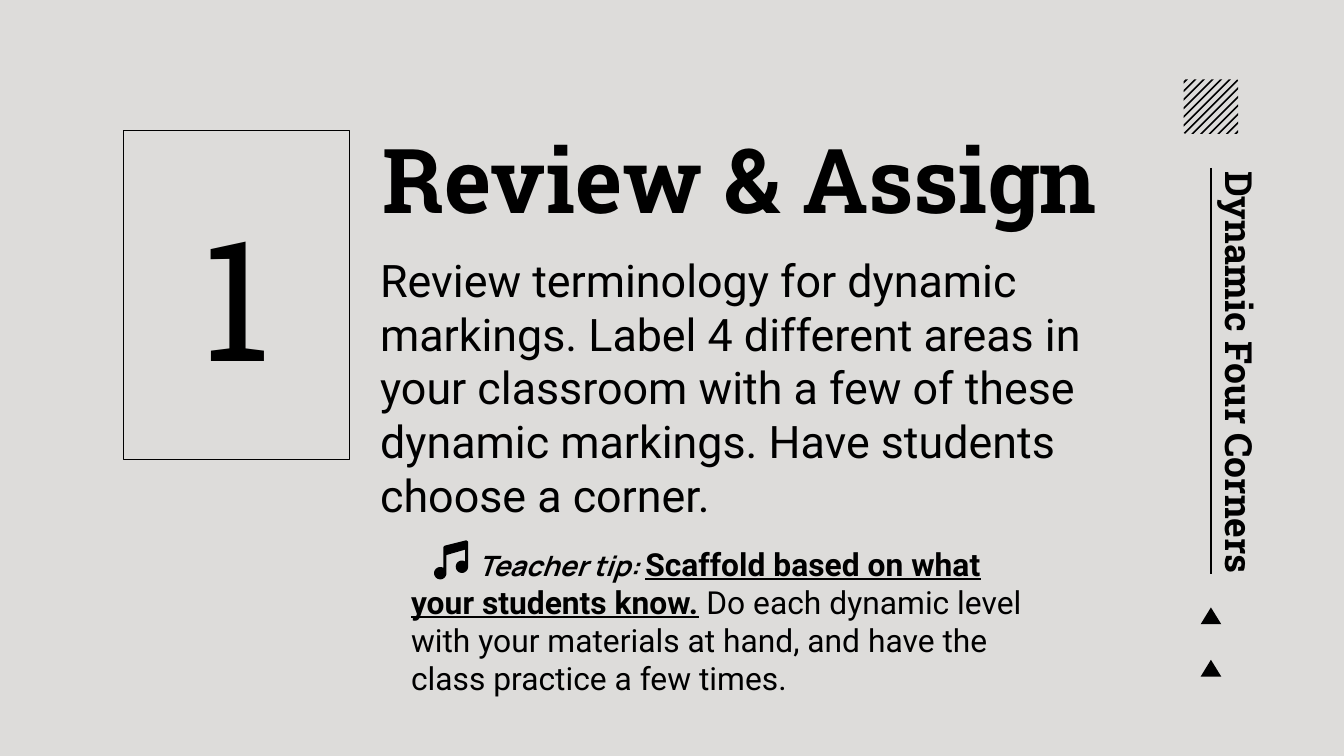
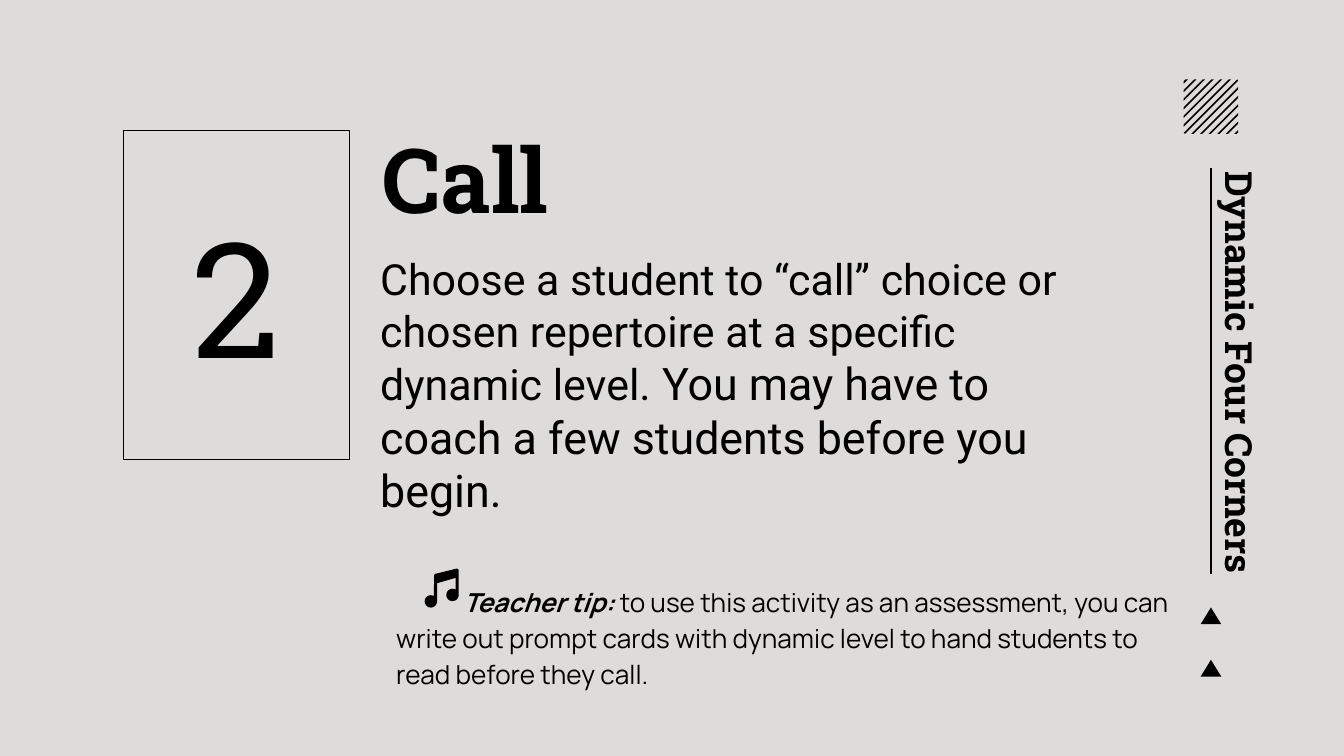
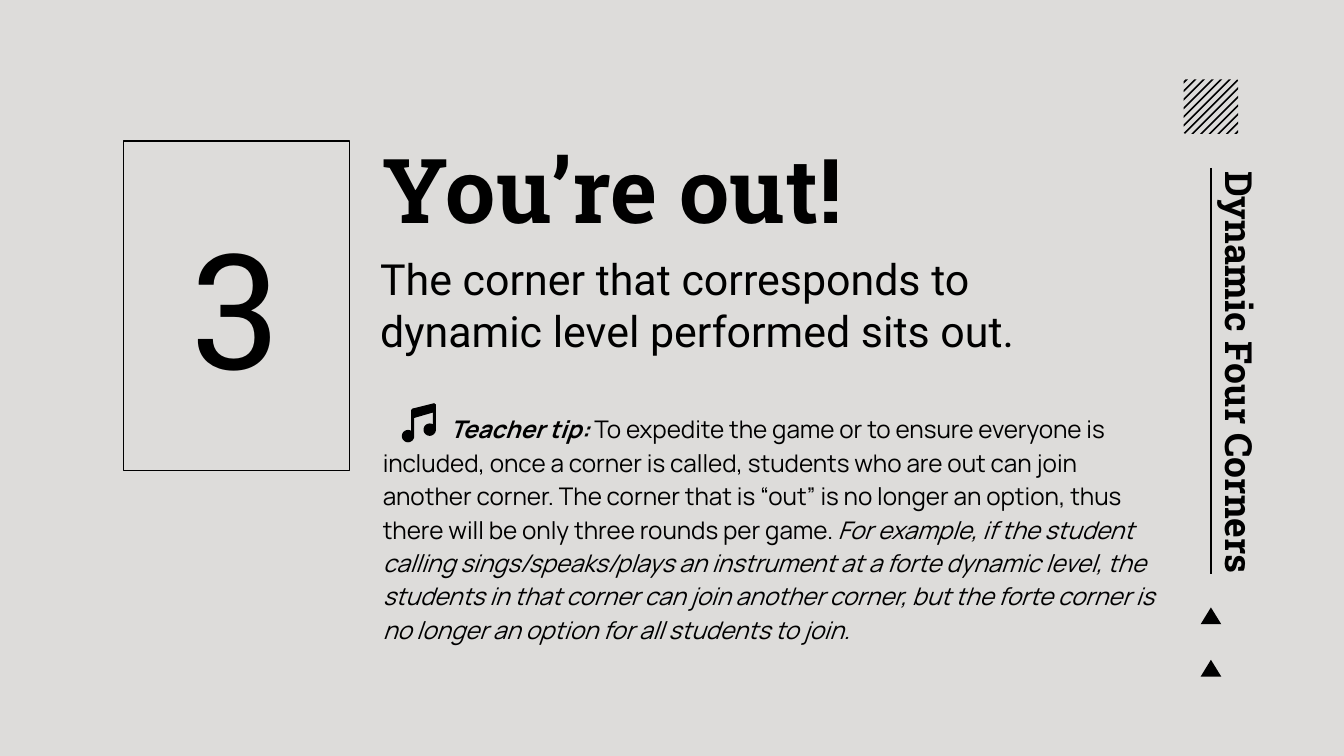
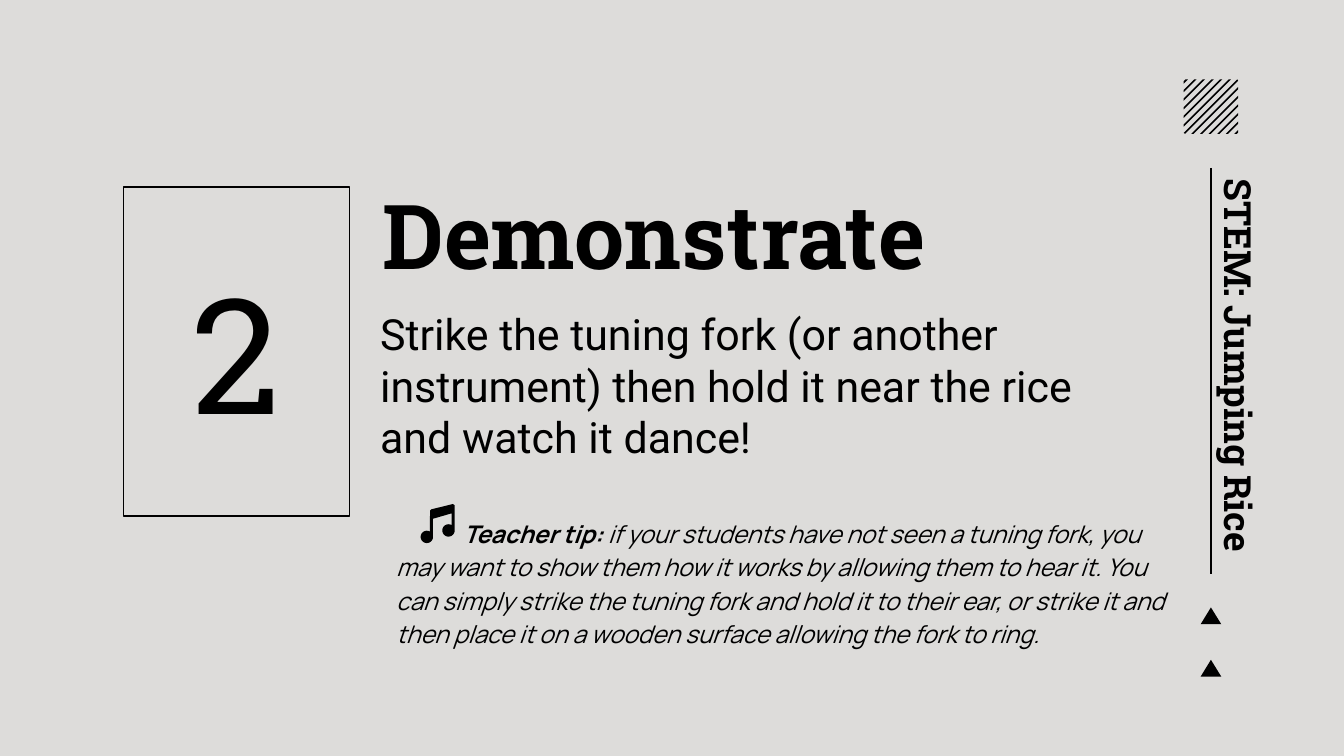
from math import cos, radians, sin

from lxml import etree
from pptx import Presentation
from pptx.dml.color import RGBColor
from pptx.enum.shapes import MSO_CONNECTOR, MSO_SHAPE
from pptx.enum.text import MSO_ANCHOR, PP_ALIGN
from pptx.oxml.ns import qn
from pptx.util import Emu, Inches, Pt

RECT = MSO_SHAPE.RECTANGLE
LINE = MSO_CONNECTOR.STRAIGHT
TOP, MIDDLE = MSO_ANCHOR.TOP, MSO_ANCHOR.MIDDLE
LEFT, CENTER = PP_ALIGN.LEFT, PP_ALIGN.CENTER

COLS, ROWS = 100, 56.25  # square grid cells of a tenth of an inch
INK, PAPER = "000000", "DDDCDA"
SLAB, SANS, TIP = "Roboto Slab", "Roboto", "Manrope"


def cell(count):
    return Emu(round(count * Inches(0.1)))


def color(code):
    return RGBColor.from_string(code)


def arc(x, y, radius):
    """Points of a note head, from its upper right round to its right side."""
    return [(x + radius * cos(radians(a)), y + radius * sin(radians(a)))
            for a in range(300, -1, -15)]


def stripes(side, first, step, width, count):
    """Diagonal bands clipped to a square."""
    bands = []
    for i in range(count):
        near = first + i * step
        ends = [(min(u, side), max(u - side, 0)) for u in (near, near + width)]
        bands.append(ends + [(y, x) for x, y in reversed(ends)])
    return bands


NOTE = [(2.4, 0), (0.8, 0.4), (0.7, 0.5), *arc(0.46, 2.45, 0.46),
        (0.92, 1.1), (2.3, 0.7), *arc(2.07, 1.97, 0.46), (2.53, 0.1)]
HATCH = stripes(4.05, 0.15, 0.64, 0.17, 13)
ARROW = [(0, 1.25), (0.77, 0), (1.54, 1.25)]


class Deck:
    def __init__(self):
        self.prs = Presentation()
        self.prs.slide_width, self.prs.slide_height = cell(COLS), cell(ROWS)
        fill = self.prs.slide_master.background.fill
        fill.solid()
        fill.fore_color.rgb = color(PAPER)

    def page(self):
        self.slide = self.prs.slides.add_slide(self.prs.slide_layouts[6])
        self.shapes = self.slide.shapes

    def text(self, runs, box, size=24, font=SANS, bold=False, align=LEFT,
             anchor=TOP, turn=0, indent=0, space=None):
        """Runs are a string, or pairs of a string and its own font settings."""
        shape = self.shapes.add_textbox(*map(cell, box))
        shape.rotation = turn
        frame = shape.text_frame
        frame.word_wrap = True
        frame.vertical_anchor = anchor
        frame.margin_left = frame.margin_right = cell(1)
        frame.margin_top = frame.margin_bottom = cell(1)
        para = frame.paragraphs[0]
        para.alignment = align
        para.line_spacing = space
        if indent:
            props = para._p.get_or_add_pPr()
            props.set("marL", "0")
            props.set("indent", str(cell(indent)))
        for words, own in [(runs, {})] if isinstance(runs, str) else runs:
            run = para.add_run()
            run.text = words
            look = {"name": font, "size": size, "bold": bold, **own}
            look["size"] = Pt(look["size"])
            for key, value in look.items():
                setattr(run.font, key, value)
            run.font.color.rgb = color(INK)

    def rect(self, box):
        shape = self.shapes.add_shape(RECT, *map(cell, box))
        shape.shadow.inherit = False
        shape.fill.solid()
        shape.fill.fore_color.rgb = color(PAPER)
        shape.line.color.rgb = color(INK)
        shape.line.width = Pt(0.75)

    def line(self, *ends):
        rule = self.shapes.add_connector(LINE, *map(cell, ends))
        rule.line.color.rgb = color(INK)
        rule.line.width = Pt(0.75)
        etree.SubElement(rule._element.spPr, qn("a:effectLst"))

    def solid(self, left, top, *loops):
        """One filled outline made of closed loops."""
        path = None
        for loop in loops:
            spots = [(cell(left + x), cell(top + y)) for x, y in loop]
            if path is None:
                path = self.shapes.build_freeform(*spots[0])
            else:
                path.move_to(*spots[0])
            path.add_line_segments(spots[1:], close=True)
        shape = path.convert_to_shape()
        shape.shadow.inherit = False
        shape.fill.solid()
        shape.fill.fore_color.rgb = color(INK)
        shape.line.fill.background()

    def side(self, label, width):
        """The right edge: hatch, rule, turned label and arrows."""
        for top in (45.2, 49.1):
            self.solid(89.33, top, ARROW)
        self.line(90.1, 12.5, 90.1, 42.7)
        self.solid(88.07, 5.9, *HATCH)
        mid = 91 if width == 35 else 90.95
        high = 29.25 if width == 35 else 27.25
        self.text(label, (mid - width / 2, high - 3.95, width, 7.9),
                  size=20, font=SLAB, bold=True, turn=90)

    def step(self, number, title, body, tip, top, low, spot, note,
             digit=86, size=23, tall=14, space=1.15,
             label="Dynamic Four Corners", width=35):
        self.page()
        self.side(label, width)
        self.rect((9.2, top, 16.8, 24.5))
        self.text(number, (9.7, top + 3.1, 15.7, 18.2), size=digit, font=SLAB,
                  align=CENTER, anchor=MIDDLE)
        self.text(title, (27.5, top - 1.5, 60, 9.6), size=48, font=SLAB,
                  bold=True)
        self.text(body, (27.3, low, 56.8, 18.2), size=size)
        self.text(tip, spot, size=tall, font=TIP, indent=5, space=space)
        self.solid(*note, NOTE)


LEAD = {"bold": True, "italic": True}
SLANT = {"italic": True}
ROBOTO = {"name": SANS, "size": 17}

STEPS = [
    dict(number="1", title="Review & Assign", digit=90, size=24,
         body="Review terminology for dynamic markings. Label 4 different "
              "areas in your classroom with a few of these dynamic markings. "
              "Have students choose a corner.",
         tip=[("Teacher tip: ", LEAD),
              ("Scaffold based on what your students know.",
               {**ROBOTO, "bold": True, "underline": True}),
              (" Do each dynamic level with your materials at hand, and have "
               "the class practice a few times.", ROBOTO)],
         top=9.7, low=17.8, spot=(29.6, 39.5, 47.9, 14.5), note=(32.3, 40.2),
         tall=15, space=None),
    dict(number="2", title="Call",
         body=[("Choose a student to “call” choice or chosen repertoire at a "
                "specific dynamic level. ", {}),
               ("You may have to coach a few students before you begin.",
                {"size": 24})],
         tip=[("Teacher tip: ", LEAD),
              ("to use this activity as an assessment, you can write out "
               "prompt cards with dynamic level to hand students to read "
               "before they call.", {})],
         top=9.7, low=17.8, spot=(28.5, 42.3, 59.7, 12.5), note=(31.6, 42.3)),
    dict(number="3", title="You’re out!",
         body="The corner that corresponds to dynamic level performed sits "
              "out.",
         tip=[("Teacher tip: ", LEAD),
              ("To expedite the game or to ensure everyone is included, once "
               "a corner is called, students who are out can join another "
               "corner. The corner that is “out” is no longer an option, thus "
               "there will be only three rounds per game. ", {}),
              ("For example, if the student calling sings/speaks/plays an "
               "instrument at a forte dynamic level, the students in that "
               "corner can join another corner, but the forte corner is no "
               "longer an option for all students to join.", SLANT)],
         top=10.5, low=17.8, spot=(27.5, 29.5, 59.7, 27.2), note=(29.9, 30),
         tall=13),
    dict(number="2", title="Demonstrate",
         body="Strike the tuning fork (or another instrument) then hold it "
              "near the rice and watch it dance!",
         tip=[("Teacher tip:", LEAD),
              (" if your students have not seen a tuning fork, you may want "
               "to show them how it works by allowing them to hear it. You "
               "can simply strike the tuning fork and hold it to their ear, "
               "or strike it and then place it on a wooden surface allowing "
               "the fork to ring.", SLANT)],
         top=13.9, low=21.9, spot=(28.5, 37.3, 59.7, 19.7), note=(31.3, 37.5),
         tall=13, label="STEM: Jumping Rice", width=29.9),
]


def main():
    deck = Deck()
    for step in STEPS:
        deck.step(**step)
    deck.prs.save("out.pptx")


if __name__ == "__main__":
    main()
